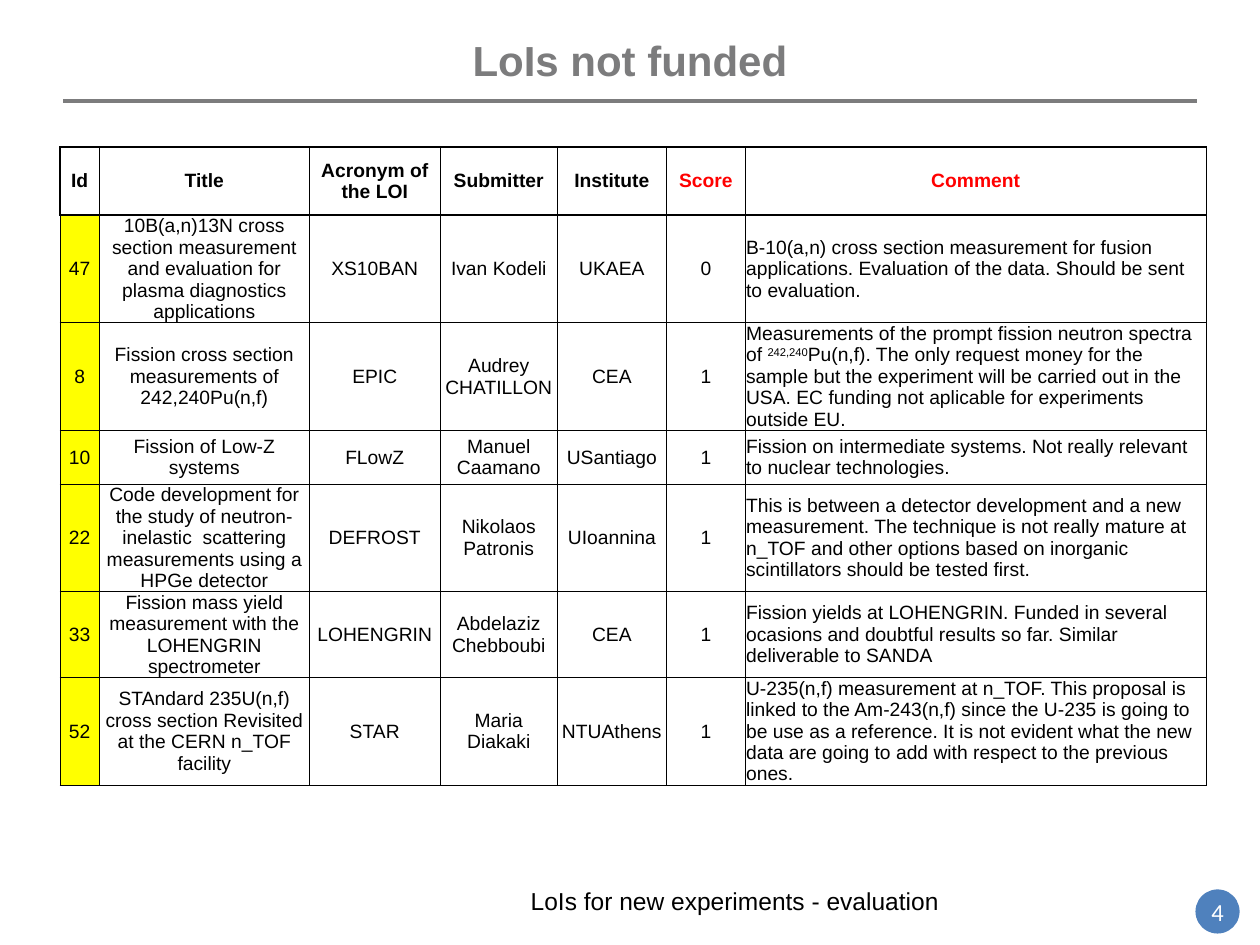
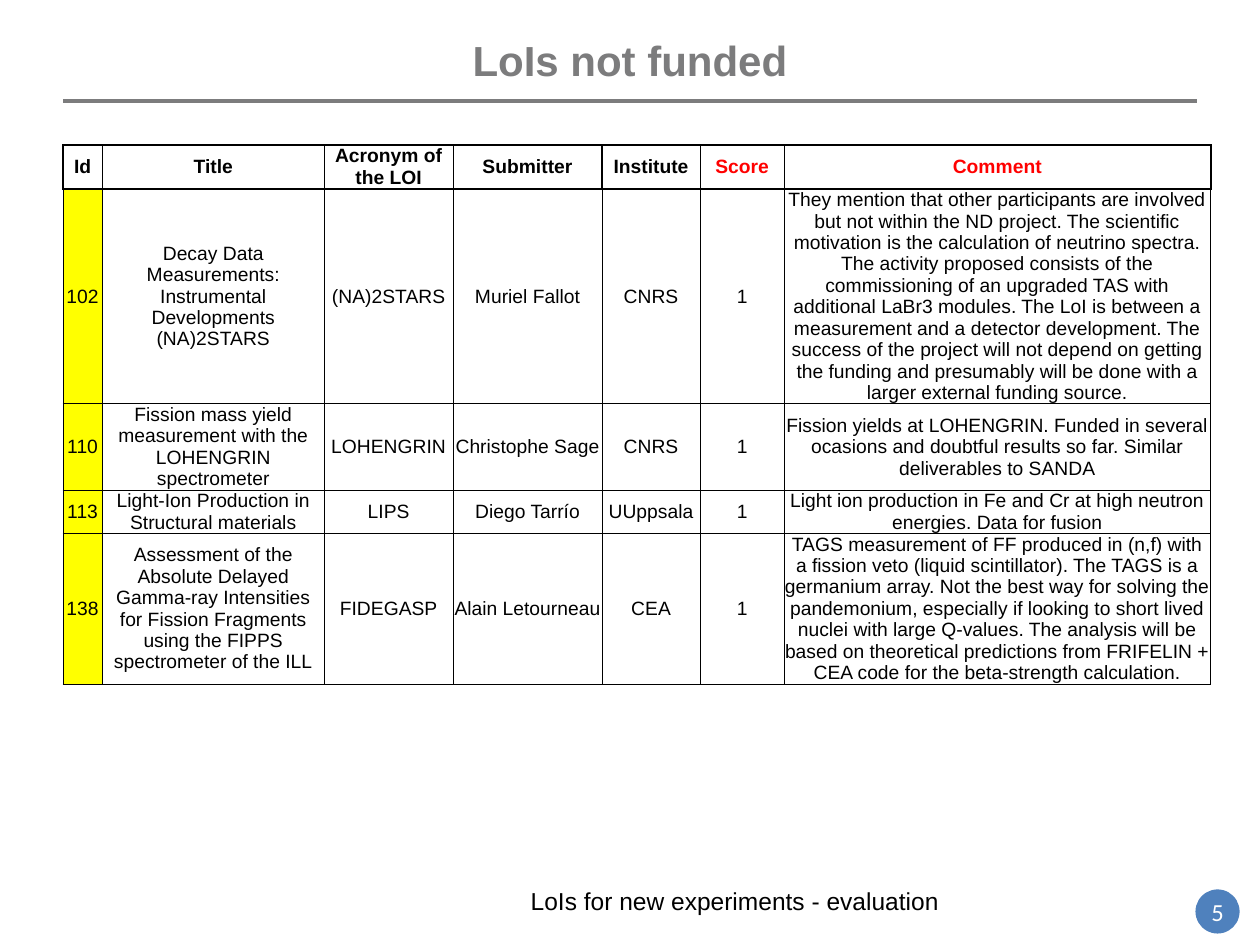
"""Build two slides that tabulate the LoIs not funded."""
from lxml import etree
from pptx import Presentation
from pptx.dml.color import RGBColor
from pptx.enum.shapes import MSO_CONNECTOR as CONN, MSO_SHAPE as SHAPE
from pptx.enum.text import MSO_ANCHOR as ANCHOR, PP_ALIGN as ALIGN
from pptx.oxml.ns import qn
from pptx.util import Cm, Pt

GREY, BLUE, RED, YELLOW = "7C7C7D", "4F81BD", "FF0000", "FFFF00"
BLACK, WHITE = "000000", "FFFFFF"
TITLE = {"name": "Arial", "size": Pt(24), "bold": True}
FOOTER = {"name": "Arial", "size": Pt(14), "bold": False}
NUMBER = {"name": "Calibri", "size": Pt(14), "bold": False}
HEAD = {"name": "Arial", "size": Pt(11), "bold": True}
BODY = {"name": "Arial", "size": Pt(11), "bold": False}
NO_MARGINS = dict.fromkeys(
    ["margin_left", "margin_top", "margin_right", "margin_bottom"], 0)
CELL_MARGINS = {**NO_MARGINS, "margin_left": Cm(0.01),
                "margin_right": Cm(0.02)}
HEADINGS = ["Id", "Title", "Acronym of the LOI", "Submitter", "Institute",
            "Score", "Comment"]

SLIDES = [
    {"number": "4", "left": 1.21, "top": 2.96, "comment_align": ALIGN.LEFT,
     "cols": [0.8, 4.23, 2.64, 2.36, 2.2, 1.59, 9.29],
     "heights": [1.38, 2.17, 2.17, 1.08, 2.17, 1.73, 2.17],
     "rows": [
         ["47", "10B(a,n)13N cross section measurement and evaluation for "
          "plasma diagnostics applications",
          "XS10BAN", "Ivan Kodeli", "UKAEA", "0",
          "B-10(a,n) cross section measurement for fusion applications. "
          "Evaluation of the data. Should be sent to evaluation."],
         ["8", "Fission cross section measurements of 242,240Pu(n,f)",
          "EPIC", "Audrey CHATILLON", "CEA", "1",
          "Measurements of the prompt fission neutron spectra of "
          "^242,240^Pu(n,f). The only request money for the sample but the "
          "experiment will be carried out in the USA. EC funding not "
          "aplicable for experiments outside EU."],
         ["10", "Fission of Low-Z systems",
          "FLowZ", "Manuel Caamano", "USantiago", "1",
          "Fission on intermediate systems. Not really relevant to nuclear "
          "technologies."],
         ["22", "Code development for the study of neutron-inelastic  "
          "scattering measurements using a HPGe detector",
          "DEFROST", "Nikolaos Patronis", "UIoannina", "1",
          "This is between a detector development and a new measurement. "
          "The technique is not really mature at n_TOF and other options "
          "based on inorganic scintillators should be tested first."],
         ["33", "Fission mass yield measurement with the LOHENGRIN "
          "spectrometer",
          "LOHENGRIN", "Abdelaziz Chebboubi", "CEA", "1",
          "Fission yields at LOHENGRIN. Funded in several ocasions and "
          "doubtful results so far. Similar deliverable to SANDA"],
         ["52", "STAndard 235U(n,f) cross section Revisited at the CERN "
          "n_TOF facility",
          "STAR", "Maria Diakaki", "NTUAthens", "1",
          "U-235(n,f) measurement at n_TOF. This proposal is linked to the "
          "Am-243(n,f) since the U-235 is going to be use as a reference. "
          "It is not evident what the new data are going to add with respect "
          "to the previous ones."]]},
    {"number": "5", "left": 1.27, "top": 2.92, "comment_align": ALIGN.CENTER,
     "cols": [0.8, 4.47, 2.6, 3.0, 1.98, 1.69, 8.6],
     "heights": [0.89, 4.33, 1.74, 0.87, 3.04],
     "rows": [
         ["102", "Decay Data Measurements: Instrumental Developments "
          "(NA)2STARS",
          "(NA)2STARS", "Muriel Fallot", "CNRS", "1",
          "They mention that other participants are involved but not within "
          "the ND project. The scientific motivation is the calculation of "
          "neutrino spectra. The activity proposed consists of the "
          "commissioning of an upgraded TAS with additional LaBr3 modules. "
          "The LoI is between a measurement and a detector development. The "
          "success of the project will not depend on getting the funding and "
          "presumably will be done with a larger external funding source."],
         ["110", "Fission mass yield measurement with the LOHENGRIN "
          "spectrometer",
          "LOHENGRIN", "Christophe Sage", "CNRS", "1",
          "Fission yields at LOHENGRIN. Funded in several ocasions and "
          "doubtful results so far. Similar deliverables to SANDA"],
         ["113", "Light-Ion Production in Structural materials",
          "LIPS", "Diego Tarrío", "UUppsala", "1",
          "Light ion production in Fe and Cr at high neutron energies. Data "
          "for fusion"],
         ["138", "Assessment of the Absolute Delayed Gamma-ray Intensities "
          "for Fission Fragments using the FIPPS spectrometer of the ILL",
          "FIDEGASP", "Alain Letourneau", "CEA", "1",
          "TAGS measurement of FF produced in (n,f) with a fission veto "
          "(liquid scintillator). The TAGS is a germanium array. Not the "
          "best way for solving the pandemonium, especially if looking to "
          "short lived nuclei with large Q-values. The analysis will be "
          "based on theoretical predictions from FRIFELIN + CEA code for the "
          "beta-strength calculation."]]},
]


def rgb(color):
    return RGBColor.from_string(color)


def write(tf, text, fmt, color, align=ALIGN.CENTER):
    p = tf.paragraphs[0]
    p.alignment = align
    for i, part in enumerate(text.split("^")):
        r = p.add_run()
        r.text = part
        for key, value in fmt.items():
            setattr(r.font, key, value)
        r.font.color.rgb = rgb(color)
        if i % 2:
            r._r.get_or_add_rPr().set("baseline", "30000")


prs = Presentation()
prs.slide_width, prs.slide_height = Cm(25.4), Cm(19.05)

for data in SLIDES:
    s = prs.slides.add_slide(prs.slide_layouts[6])

    footer = s.shapes.add_textbox(Cm(10.45), Cm(17.73), Cm(8.76), Cm(0.86))
    footer.text_frame.word_wrap = False
    write(footer.text_frame, "LoIs for new experiments - evaluation", FOOTER,
          BLACK, ALIGN.LEFT)

    rule = s.shapes.add_connector(CONN.STRAIGHT, Cm(1.27), Cm(2.03),
                                  Cm(24.13), Cm(2.03))
    rule.line.color.rgb = rgb(GREY)
    rule.line.width = Pt(2.25)
    etree.SubElement(rule._element.spPr, qn("a:effectLst"))

    title = s.shapes.add_textbox(Cm(1.27), Cm(0.72), Cm(22.86), Cm(0.97))
    title.text_frame.word_wrap = True
    title.text_frame.vertical_anchor = ANCHOR.MIDDLE
    write(title.text_frame, "LoIs not funded", TITLE, GREY)

    badge = s.shapes.add_shape(SHAPE.OVAL, Cm(24.1), Cm(17.93), Cm(0.89),
                               Cm(0.89))
    badge.shadow.inherit = False
    badge.fill.solid()
    badge.fill.fore_color.rgb = rgb(BLUE)
    badge.line.fill.background()
    tf = badge.text_frame
    tf.word_wrap = False
    tf.vertical_anchor = ANCHOR.MIDDLE
    for key, value in NO_MARGINS.items():
        setattr(tf, key, value)
    write(tf, data["number"], NUMBER, WHITE)

    rows = [HEADINGS] + data["rows"]
    table = s.shapes.add_table(
        len(rows), len(HEADINGS), Cm(data["left"]), Cm(data["top"]),
        Cm(sum(data["cols"])), Cm(sum(data["heights"]))).table
    table.first_row = table.horz_banding = False
    for column, width in zip(table.columns, data["cols"]):
        column.width = Cm(width)
    for row, height in zip(table.rows, data["heights"]):
        row.height = Cm(height)

    for i, row in enumerate(rows):
        for j, text in enumerate(row):
            cell = table.cell(i, j)
            cell.vertical_anchor = ANCHOR.MIDDLE
            for key, value in CELL_MARGINS.items():
                setattr(cell, key, value)
            tcPr = cell._tc.get_or_add_tcPr()
            for side in "LRTB":
                thick = i == 0 or (i == 1 and side == "T")
                ln = etree.SubElement(tcPr, qn(f"a:ln{side}"),
                                      w=str(Pt(1 if thick else 0.5)))
                fill = etree.SubElement(ln, qn("a:solidFill"))
                etree.SubElement(fill, qn("a:srgbClr"), val=BLACK)
            if i and j == 0:
                cell.fill.solid()
                cell.fill.fore_color.rgb = rgb(YELLOW)
            else:
                cell.fill.background()
            is_comment = i and j == len(HEADINGS) - 1
            write(cell.text_frame, text, BODY if i else HEAD,
                  RED if i == 0 and j >= 5 else BLACK,
                  data["comment_align"] if is_comment else ALIGN.CENTER)
            cell.text_frame.paragraphs[0].line_spacing = Pt(12.25)

prs.save("out.pptx")
